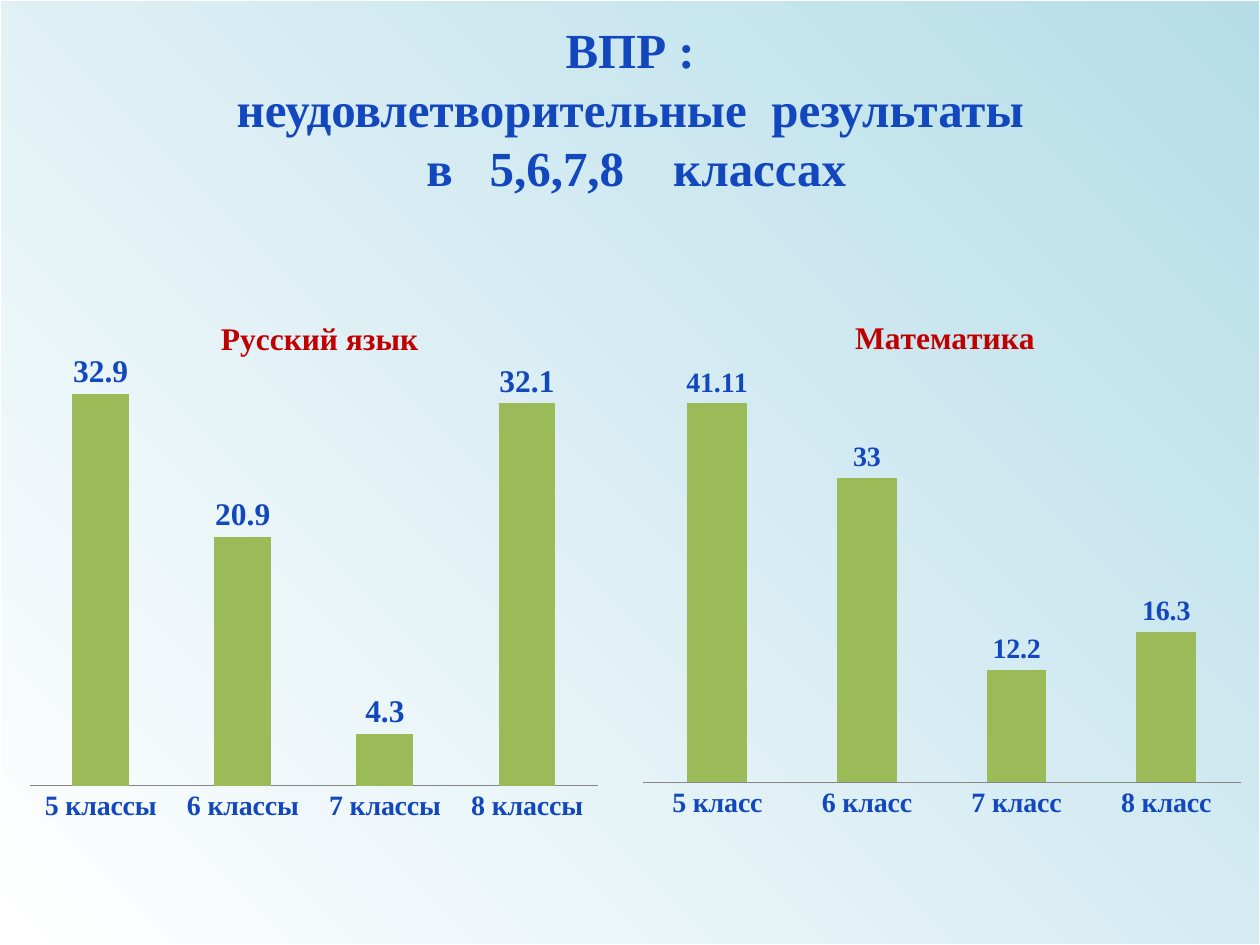
from lxml import etree
from pptx import Presentation
from pptx.chart.data import CategoryChartData
from pptx.dml.color import RGBColor
from pptx.enum.chart import XL_CHART_TYPE as CT, XL_LABEL_POSITION as LP, XL_TICK_MARK as TM
from pptx.enum.shapes import MSO_SHAPE
from pptx.enum.text import MSO_ANCHOR, PP_ALIGN
from pptx.oxml.ns import qn
from pptx.util import Inches, Pt

COLORS = {"blue": "1247BE", "red": "C00000", "bar": "9BBB59", "axis": "868686",
          "white": "FFFFFF", "sky": "B6DDE8"}
FONT = "Times New Roman"


def rgb(name):
    return RGBColor.from_string(COLORS[name])


def style_font(font, size, color):
    font.name = FONT
    font.size = Pt(size)
    font.bold = True
    font.color.rgb = rgb(color)


def add_background(slide, x, y, w, h):
    sp = slide.shapes.add_shape(MSO_SHAPE.RECTANGLE, x, y, w, h)
    sp.shadow.inherit = False
    sp.fill.gradient()
    sp.fill.gradient_angle = 45
    for stop, color, position in zip(sp.fill.gradient_stops, ("white", "sky"), (0, 1)):
        stop.color.rgb = rgb(color)
        stop.position = position
    sp.line.color.rgb = rgb("white")
    sp.line.width = Pt(0.75)
    slide.shapes._spTree.insert(2, sp._element)


def add_title(slide, x, y, w, h):
    title = slide.shapes.title
    title.left, title.top, title.width, title.height = x, y, w, h
    tf = title.text_frame
    tf.word_wrap = True
    tf.vertical_anchor = MSO_ANCHOR.MIDDLE
    tf.text = "ВПР : \vнеудовлетворительные  результаты \vв   5,6,7,8    классах"
    p = tf.paragraphs[0]
    p.alignment = PP_ALIGN.CENTER
    for r in p.runs:
        style_font(r.font, 28, "blue")


def set_plot_layout(chart, box):
    plot_area = chart._chartSpace.chart.plotArea
    for old in plot_area.findall(qn("c:layout")):
        plot_area.remove(old)
    layout = etree.Element(qn("c:layout"))
    manual = etree.SubElement(layout, qn("c:manualLayout"))
    settings = [("layoutTarget", "inner"), ("xMode", "edge"), ("yMode", "edge")]
    settings += zip("xywh", box)
    for tag, value in settings:
        etree.SubElement(manual, qn(f"c:{tag}")).set("val", str(value))
    plot_area.insert(0, layout)


def add_results_chart(slide, x, y, w, h, subject, grade, values, top, label_size, plot_box):
    data = CategoryChartData()
    data.categories = [f"{n} {grade}" for n in range(5, 9)]
    data.add_series("Series 1", values)
    chart = slide.shapes.add_chart(CT.COLUMN_CLUSTERED, x, y, w, h, data).chart
    chart.has_legend = False
    chart.font.name = "Calibri"
    chart.font.size = Pt(10)

    chart.has_title = True
    tf = chart.chart_title.text_frame
    tf.text = subject
    style_font(tf.paragraphs[0].runs[0].font, 18, "red")
    chart.chart_title.include_in_layout = False

    cat_axis = chart.category_axis
    cat_axis.major_tick_mark = TM.NONE
    cat_axis.format.line.color.rgb = rgb("axis")
    style_font(cat_axis.tick_labels.font, 16, "blue")
    val_axis = chart.value_axis
    val_axis.visible = False
    val_axis.has_major_gridlines = False
    val_axis.minimum_scale, val_axis.maximum_scale = 0, top

    plot = chart.plots[0]
    plot.gap_width, plot.overlap = 150, -25
    plot.vary_by_categories = False
    fill = plot.series[0].format.fill
    fill.solid()
    fill.fore_color.rgb = rgb("bar")
    plot.has_data_labels = True
    labels = plot.data_labels
    labels.show_value = True
    labels.position = LP.OUTSIDE_END
    style_font(labels.font, label_size, "blue")
    set_plot_layout(chart, plot_box)


def main():
    prs = Presentation()
    prs.slide_width, prs.slide_height = Inches(10), Inches(7.5)
    slide = prs.slides.add_slide(prs.slide_layouts[5])
    add_background(slide, 0, 0, prs.slide_width, prs.slide_height)
    add_title(slide, Inches(0.55), Inches(0.23), Inches(9), Inches(1.25))
    add_results_chart(slide, Inches(0.23), Inches(2.34), Inches(4.61), Inches(4.53),
                      "Русский язык", "классы", (32.9, 20.9, 4.3, 32.1), 35, 18,
                      (0, 0.13, 0.98, 0.73))
    add_results_chart(slide, Inches(5), Inches(2.34), Inches(5), Inches(4.45),
                      "Математика", "класс", (41.11, 33, 12.2, 16.3), 45, 16,
                      (0.02, 0.13, 0.95, 0.74))
    prs.save("out.pptx")


if __name__ == "__main__":
    main()
